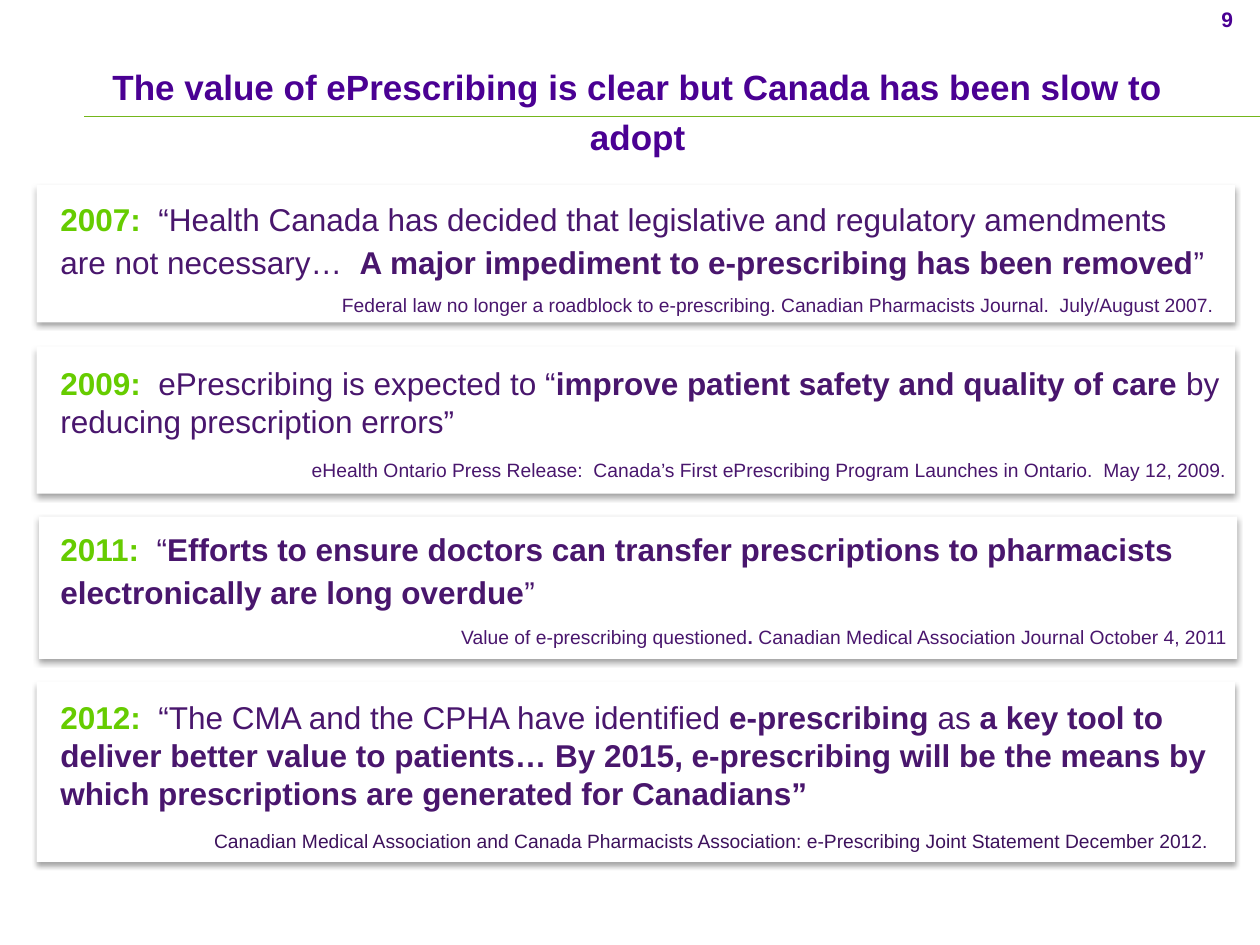
from dataclasses import dataclass

from lxml import etree
from pptx import Presentation
from pptx.dml.color import RGBColor
from pptx.enum.shapes import MSO_CONNECTOR, MSO_SHAPE
from pptx.enum.text import MSO_ANCHOR, MSO_AUTO_SIZE, PP_ALIGN
from pptx.oxml.ns import qn
from pptx.util import Pt

LEFT, CENTER, RIGHT = PP_ALIGN.LEFT, PP_ALIGN.CENTER, PP_ALIGN.RIGHT
TOP, MIDDLE, BOTTOM = MSO_ANCHOR.TOP, MSO_ANCHOR.MIDDLE, MSO_ANCHOR.BOTTOM
NO_AUTOFIT, GROW = MSO_AUTO_SIZE.NONE, MSO_AUTO_SIZE.SHAPE_TO_FIT_TEXT

FONT = "Arial"
COLORS = {
    "title": "4A0093",
    "body": "49166D",
    "joint": "3D115C",
    "year": "66CC00",
    "rule": "74B61B",
    "card": "FFFFFF",
    "shadow": "000000",
}
INSETS = (7.2, 3.6, 7.2, 3.6)
TIGHT = (0, 2.88, 0, 0)
QUOTE_LEFT, CARD_WIDTH, SOURCE_RIGHT = 27.4, 684.7, 701.3


@dataclass
class Run:
    text: str
    bold: bool = False
    color: str = "body"


@dataclass
class Box:
    left: float
    top: float
    width: float
    height: float

    def lengths(self) -> tuple:
        return Pt(self.left), Pt(self.top), Pt(self.width), Pt(self.height)


@dataclass
class Card:
    year: str
    left: float
    top: float
    height: float
    quote: list[Run]
    quote_box: Box
    source: list[Run]
    source_box: Box
    line_spacing: float = 1.0
    space_after: float = 12
    tight_source: bool = False


def source_area(left: float, top: float, height: float) -> Box:
    return Box(left, top, SOURCE_RIGHT - left, height)


def write_text(frame, runs: list[Run], *, size: float, align=LEFT, anchor=TOP,
               insets: tuple = INSETS, line_spacing: float = 1.0,
               space_after: float = 0, auto_size=GROW) -> None:
    frame.word_wrap = True
    frame.auto_size = auto_size
    frame.vertical_anchor = anchor
    (frame.margin_left, frame.margin_top,
     frame.margin_right, frame.margin_bottom) = map(Pt, insets)
    paragraph = frame.paragraphs[0]
    paragraph.alignment = align
    paragraph.line_spacing = line_spacing
    paragraph.space_before = Pt(0)
    paragraph.space_after = Pt(space_after)
    for part in runs:
        run = paragraph.add_run()
        run.text = part.text
        run.font.name = FONT
        run.font.size = Pt(size)
        run.font.bold = part.bold
        run.font.color.rgb = RGBColor.from_string(COLORS[part.color])


def add_shadow(shape) -> None:
    shape.shadow.inherit = False
    effects = shape._element.spPr.find(qn("a:effectLst"))
    shadow = etree.SubElement(effects, qn("a:outerShdw"), blurRad=str(Pt(3.1)),
                              dist=str(Pt(1.8)), dir="5400000", rotWithShape="0")
    color = etree.SubElement(shadow, qn("a:srgbClr"), val=COLORS["shadow"])
    etree.SubElement(color, qn("a:alpha"), val="35000")


def draw_card(slide, card: Card) -> None:
    shapes = slide.shapes.add_group_shape().shapes
    panel_box = Box(card.left, card.top, CARD_WIDTH, card.height)
    panel = shapes.add_shape(MSO_SHAPE.RECTANGLE, *panel_box.lengths())
    panel.fill.solid()
    panel.fill.fore_color.rgb = RGBColor.from_string(COLORS["card"])
    panel.line.fill.background()
    add_shadow(panel)

    quote = shapes.add_textbox(*card.quote_box.lengths())
    write_text(quote.text_frame, [Run(f"{card.year}:  ", True, "year"), *card.quote],
               size=18, line_spacing=card.line_spacing, space_after=card.space_after)

    source = shapes.add_textbox(*card.source_box.lengths())
    write_text(source.text_frame, card.source, size=11, align=RIGHT,
               anchor=MIDDLE if card.tight_source else TOP,
               insets=TIGHT if card.tight_source else INSETS)


CARDS = [
    Card("2007", 20.9, 105.8, 78.5,
         [Run("“Health Canada has decided that legislative and regulatory "
              "amendments are not necessary…  "),
          Run("A major impediment to e-prescribing has been removed", True),
          Run("”")],
         Box(QUOTE_LEFT, 107.3, 677.5, 57.6),
         [Run("Federal law no longer a roadblock to e-prescribing. "
              "Canadian Pharmacists Journal.  July/August 2007.")],
         source_area(169.9, 164.2, 20.9),
         line_spacing=1.15, space_after=10),
    Card("2009", 20.9, 198, 84.2,
         [Run("ePrescribing is expected to “"),
          Run("improve patient safety and quality of care ", True),
          Run("by reducing prescription errors”")],
         Box(QUOTE_LEFT, 204.5, 677.5, 51.1),
         [Run("eHealth Ontario Press Release:  Canada’s First ePrescribing "
              "Program Launches in Ontario.  May 12, 2009.")],
         source_area(169.9, 258.5, 16.6), tight_source=True),
    Card("2011", 22.3, 295.2, 81.4,
         [Run("“"),
          Run("Efforts to ensure doctors can transfer prescriptions to "
              "pharmacists electronically are long overdue", True),
          Run("”")],
         Box(QUOTE_LEFT, 295.9, 677.5, 47.5),
         [Run("Value of e-prescribing questioned"), Run(". ", True),
          Run("Canadian Medical Association Journal October 4, 2011")],
         source_area(110.2, 354.2, 16.6),
         line_spacing=1.15, space_after=10, tight_source=True),
    Card("2012", 20.9, 389.5, 103,
         [Run("“The CMA and the CPHA have identified "),
          Run("e-prescribing", True), Run(" as "),
          Run("a key tool to deliver better value to patients… By 2015, "
              "e-prescribing will be the means by which prescriptions are "
              "generated for Canadians”", True)],
         Box(QUOTE_LEFT, 395.3, 673.9, 72.7),
         [Run("Canadian Medical Association and Canada Pharmacists Association: "
              "e-Prescribing Joint Statement December 2012. ", color="joint")],
         source_area(110.2, 470.2, 20.9)),
]


def main() -> None:
    deck = Presentation()
    deck.slide_width, deck.slide_height = Pt(720), Pt(540)
    slide = deck.slides.add_slide(deck.slide_layouts[5])

    # Title, resting on the bottom edge of its area
    title = slide.shapes.title
    title.left, title.top, title.width, title.height = Box(27.4, 0, 673.9, 90).lengths()
    write_text(title.text_frame,
               [Run("The value of ePrescribing is clear but Canada has been "
                    "slow to adopt", True, "title")],
               size=20, align=CENTER, anchor=BOTTOM, insets=(7.2, 3.6, 7.2, 0),
               line_spacing=1.2, auto_size=NO_AUTOFIT)

    # Rule and page number
    rule = slide.shapes.add_connector(MSO_CONNECTOR.STRAIGHT,
                                      Pt(48.2), Pt(66.7), Pt(720), Pt(66.7))
    rule.line.color.rgb = RGBColor.from_string(COLORS["rule"])
    rule.line.width = Pt(0.5)
    etree.SubElement(rule._element.spPr, qn("a:effectLst"))
    page_number = slide.shapes.add_textbox(*Box(682.6, 0, 37.4, 21.6).lengths())
    write_text(page_number.text_frame, [Run("9", True, "title")], size=12, align=CENTER)

    # Quotes by year
    for card in CARDS:
        draw_card(slide, card)

    deck.save("out.pptx")


if __name__ == "__main__":
    main()
